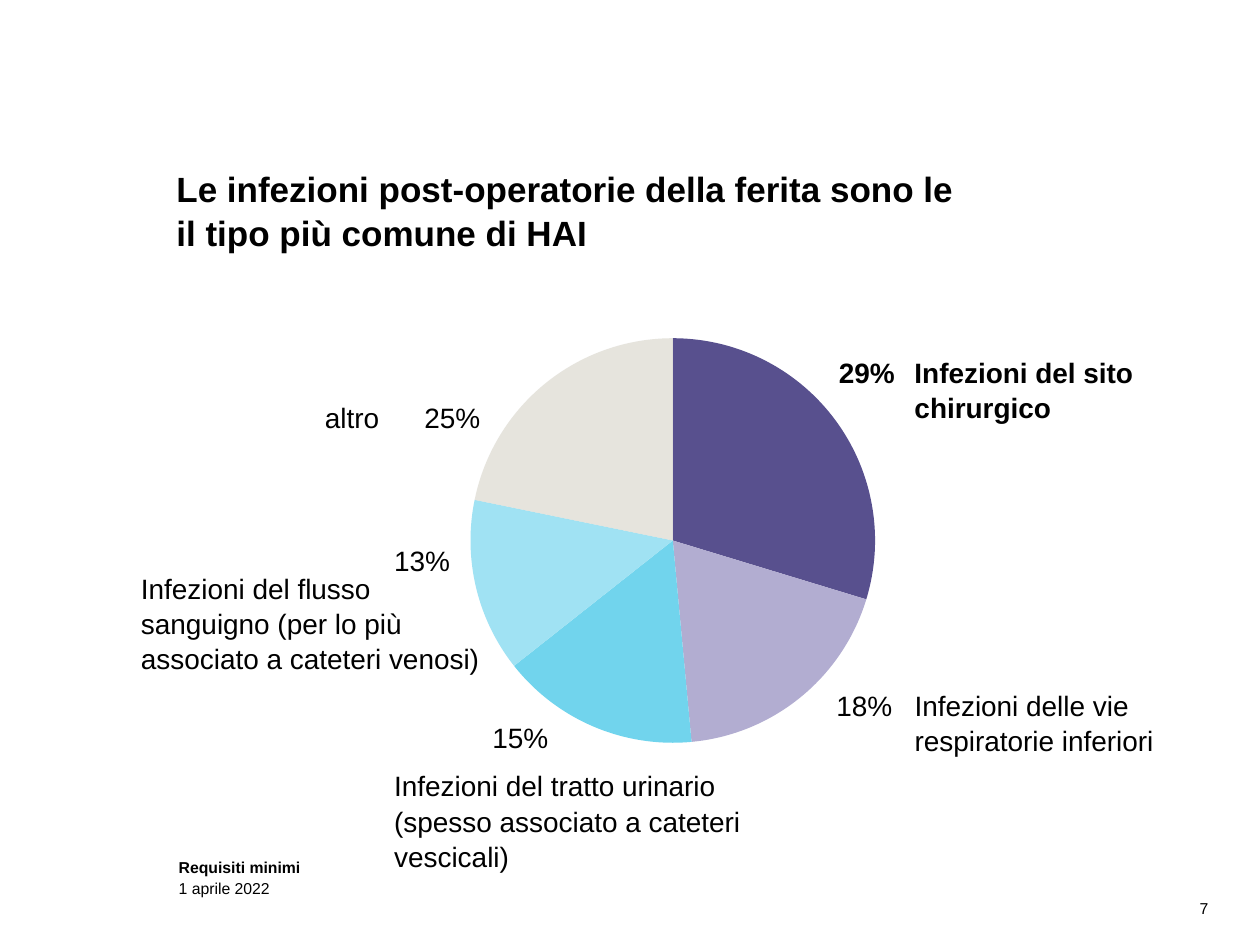
from pptx import Presentation
from pptx.chart.data import CategoryChartData
from pptx.dml.color import RGBColor
from pptx.enum.chart import XL_CHART_TYPE
from pptx.enum.text import MSO_ANCHOR, MSO_AUTO_SIZE, PP_ALIGN
from pptx.oxml import parse_xml
from pptx.oxml.ns import nsdecls, qn
from pptx.util import Inches, Pt

FONT = "Arial"
COLORS = {
    "text": "000000",
    "wound": "58508E",
    "lungs": "B2ADD1",
    "urine": "71D4ED",
    "blood": "A0E2F3",
    "other": "D9D6CC",
}
SHARES = {"wound": 30, "lungs": 19, "urine": 16, "blood": 14, "other": 22}
LABELS = [
    ("Infezioni del sito chirurgico", 7.16, 2.76, 2.57, 0.64, True),
    ("Infezioni delle vie respiratorie inferiori", 7.16, 5.4, 2.88, 0.64, False),
    ("Infezioni del tratto urinario\n(spesso associato a cateteri vescicali)",
     3.03, 6.04, 3.31, 0.91, False),
    ("Infezioni del flusso sanguigno (per lo più associato a cateteri venosi)",
     1.02, 4.47, 2.99, 0.91, False),
    ("29%", 6.56, 2.76, 0.83, 0.37, True),
    ("18%", 6.54, 5.4, 0.83, 0.37, False),
    ("15%", 3.81, 5.66, 0.83, 0.37, False),
    ("13%", 3.03, 4.25, 0.83, 0.37, False),
    ("altro", 2.48, 3.12, 1.05, 0.37, False),
    ("25%", 3.27, 3.12, 0.83, 0.37, False),
]


def color(name):
    """Return the named colour."""
    return RGBColor.from_string(COLORS[name])


def style(font, size, bold=False):
    """Set the typeface, size, weight and colour of a font."""
    font.name, font.size, font.bold = FONT, Pt(size), bold
    font.color.rgb = color("text")


def write(para, text, size, bold=False, pitch=1.05, align=PP_ALIGN.LEFT):
    """Fill a paragraph with one run per line of text."""
    para.line_spacing, para.alignment = pitch, align
    for i, line in enumerate(text.split("\n")):
        if i:
            para.add_line_break()
        run = para.add_run()
        run.text = line
        style(run.font, size, bold)


def set_up(frame):
    """Make a text frame wrap from its top at a fixed size."""
    frame.word_wrap = True
    frame.auto_size = MSO_AUTO_SIZE.NONE
    frame.vertical_anchor = MSO_ANCHOR.TOP


def add_box(slide, left, top, width, height):
    """Add a text box and return its frame."""
    box = slide.shapes.add_textbox(
        Inches(left), Inches(top), Inches(width), Inches(height))
    set_up(box.text_frame)
    return box.text_frame


def add_title(slide, text):
    """Place and fill the title."""
    title = slide.shapes.title
    title.left, title.top = Inches(1.3), Inches(1.26)
    title.width, title.height = Inches(8.31), Inches(0.47)
    set_up(title.text_frame)
    write(title.text_frame.paragraphs[0], text, 20, True)


def add_pie(slide):
    """Add the pie of infection types."""
    data = CategoryChartData()
    data.categories = [str(i + 1) for i in range(len(SHARES))]
    data.add_series("Series 1", list(SHARES.values()))
    chart = slide.shapes.add_chart(
        XL_CHART_TYPE.PIE, Inches(3.17), Inches(2.54),
        Inches(4.34), Inches(3.5), data).chart
    chart.has_legend = chart.has_title = False
    style(chart.font, 10)
    plot = chart.plots[0]
    plot.vary_by_categories = True
    for i, name in enumerate(SHARES):
        form = plot.series[0].points[i].format
        form.fill.solid()
        form.fill.fore_color.rgb = color(name)
        form.line.fill.background()
    tint = form.fill._xPr.find(".//" + qn("a:srgbClr"))
    tint.append(parse_xml(f'<a:alpha {nsdecls("a")} val="65000"/>'))
    fit_plot(chart, 0.74, 0.92)


def fit_plot(chart, width, height):
    """Centre the plot at the given shares of the chart area."""
    area = chart._chartSpace.chart.plotArea
    for old in area.findall(qn("c:layout")):
        area.remove(old)
    area.insert(0, parse_xml(
        f'<c:layout {nsdecls("c")}><c:manualLayout>'
        '<c:layoutTarget val="inner"/>'
        '<c:xMode val="edge"/><c:yMode val="edge"/>'
        f'<c:x val="{(1 - width) / 2:.2f}"/><c:y val="{(1 - height) / 2:.2f}"/>'
        f'<c:w val="{width}"/><c:h val="{height}"/>'
        '</c:manualLayout></c:layout>'))


def add_foot(slide):
    """Add the footer lines and the page number."""
    frame = add_box(slide, 1.32, 6.74, 5.8, 0.44)
    write(frame.paragraphs[0], "Requisiti minimi", 9, True, Pt(12))
    write(frame.add_paragraph(), "1 aprile 2022", 9, False, Pt(12))
    page = add_box(slide, 7.36, 7.07, 2.33, 0.52)
    write(page.paragraphs[0], "7", 9, False, Pt(12), PP_ALIGN.RIGHT)


def main():
    """Build and save the slide."""
    deck = Presentation()
    deck.slide_width, deck.slide_height = Inches(10), Inches(7.5)
    slide = deck.slides.add_slide(deck.slide_layouts[5])
    add_title(slide, "Le infezioni post-operatorie della ferita sono le\n"
                     "il tipo più comune di HAI")
    add_pie(slide)
    for text, left, top, width, height, bold in LABELS:
        frame = add_box(slide, left, top, width, height)
        write(frame.paragraphs[0], text, 16, bold)
    add_foot(slide)
    deck.save("out.pptx")


if __name__ == "__main__":
    main()
